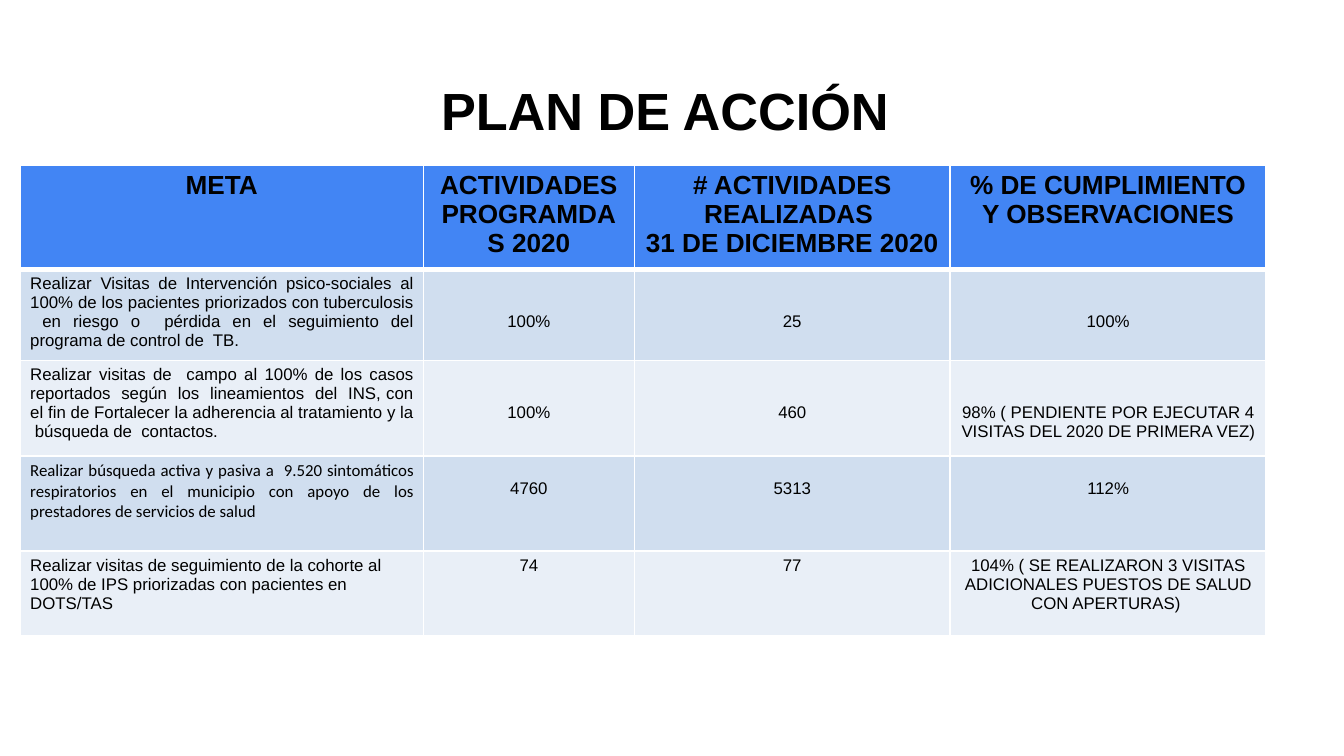
from lxml import etree
from pptx import Presentation
from pptx import util as u
from pptx.dml.color import RGBColor
from pptx.enum import text
from pptx.oxml import ns

IN = u.Inches
AL = text.PP_ALIGN


def style(para, size, align, bold=False, face="Arial"):
    para.alignment = align
    font = para.font
    font.name, font.size, font.bold = face, u.Pt(size), bold
    font.color.rgb = RGBColor.from_string("000000")


def edge(cell, widths):
    """Draw white cell borders; widths maps L, R, T, B to points."""
    props = cell._tc.get_or_add_tcPr()
    for at, (side, width) in enumerate(widths.items()):
        line = etree.Element(ns.qn("a:ln" + side), w=str(u.Pt(width)))
        fill = etree.SubElement(line, ns.qn("a:solidFill"))
        etree.SubElement(fill, ns.qn("a:srgbClr"), val="FFFFFF")
        props.insert(at, line)


deck = Presentation()
deck.slide_width = IN(10)
deck.slide_height = deck.slide_width * 9 // 16
slide = deck.slides.add_slide(deck.slide_layouts[6])

# Title
title = slide.shapes.add_textbox(IN(0.69), IN(0.3), IN(8.62), IN(1.09)).text_frame
title.word_wrap = True
title.vertical_anchor = text.MSO_ANCHOR.MIDDLE
title.margin_left = title.margin_right = IN(0.07)
title.margin_top = title.margin_bottom = IN(0.04)
title.text = "PLAN DE ACCIÓN "
style(title.paragraphs[0], 28, AL.CENTER, True)
title.paragraphs[0].line_spacing = 0.9

# Table of goals and results
rows = [
    ("META", "ACTIVIDADES PROGRAMDAS 2020",
     "# ACTIVIDADES REALIZADAS \n31 DE DICIEMBRE 2020",
     "% DE CUMPLIMIENTO\nY OBSERVACIONES"),
    ("Realizar Visitas de Intervención psico-sociales al 100% de los pacientes "
     "priorizados con tuberculosis  en riesgo o  pérdida en el seguimiento del "
     "programa de control de  TB.", "100%", "25", "100%"),
    ("Realizar visitas de  campo al 100% de los casos reportados  según  los  "
     "lineamientos  del  INS, con el fin de Fortalecer la adherencia al "
     "tratamiento y la  búsqueda de  contactos.", "100%", "460",
     "98% ( PENDIENTE POR EJECUTAR 4 VISITAS DEL 2020 DE PRIMERA VEZ) "),
    ("Realizar búsqueda activa y pasiva a  9.520 sintomáticos respiratorios en el "
     "municipio con apoyo de los prestadores de servicios de salud",
     "4760", "5313", "112%"),
    ("Realizar visitas de seguimiento de la cohorte al 100% de IPS priorizadas "
     "con pacientes en DOTS/TAS", "74", "77",
     "104% ( SE REALIZARON 3 VISITAS ADICIONALES PUESTOS DE SALUD CON APERTURAS) "),
]
wide = [3, 1.57, 2.35, 2.35]
high = [0.69, 0.67, 0.71, 0.71, 0.63]
fills = ["4285F4", "D0DEEF", "E9EFF7", "D0DEEF", "E9EFF7"]
drops = [0, 2, 2, 1, 0]  # lines by which the values sit below the row top
goals = [AL.CENTER, AL.JUSTIFY, AL.JUSTIFY, AL.JUSTIFY, AL.LEFT]
side, top = u.Pt(5.4), u.Pt(2.7)

grid = slide.shapes.add_table(len(rows), len(wide), IN(0.15), IN(1.23),
                              IN(sum(wide)), IN(sum(high))).table
for col, width in zip(grid.columns, wide):
    col.width = IN(width)

for r, row in enumerate(rows):
    grid.rows[r].height = IN(high[r])
    head = r == 0
    for c, words in enumerate(row):
        cell = grid.cell(r, c)
        cell.text = words
        cell.margin_left = cell.margin_right = side
        cell.margin_bottom = top
        cell.margin_top = top + (IN(0.14) * drops[r] if c else 0)
        cell.fill.solid()
        cell.fill.fore_color.rgb = RGBColor.from_string(fills[r])
        edge(cell, {"L": 1, "R": 1, "T": 3 if r == 1 else 1, "B": 3 if head else 1})
        face = "Calibri" if (r, c) == (3, 0) else "Arial"
        for para in cell.text_frame.paragraphs:
            style(para, 14 if head else 9, AL.CENTER if c else goals[r], head, face)

deck.save("out.pptx")
